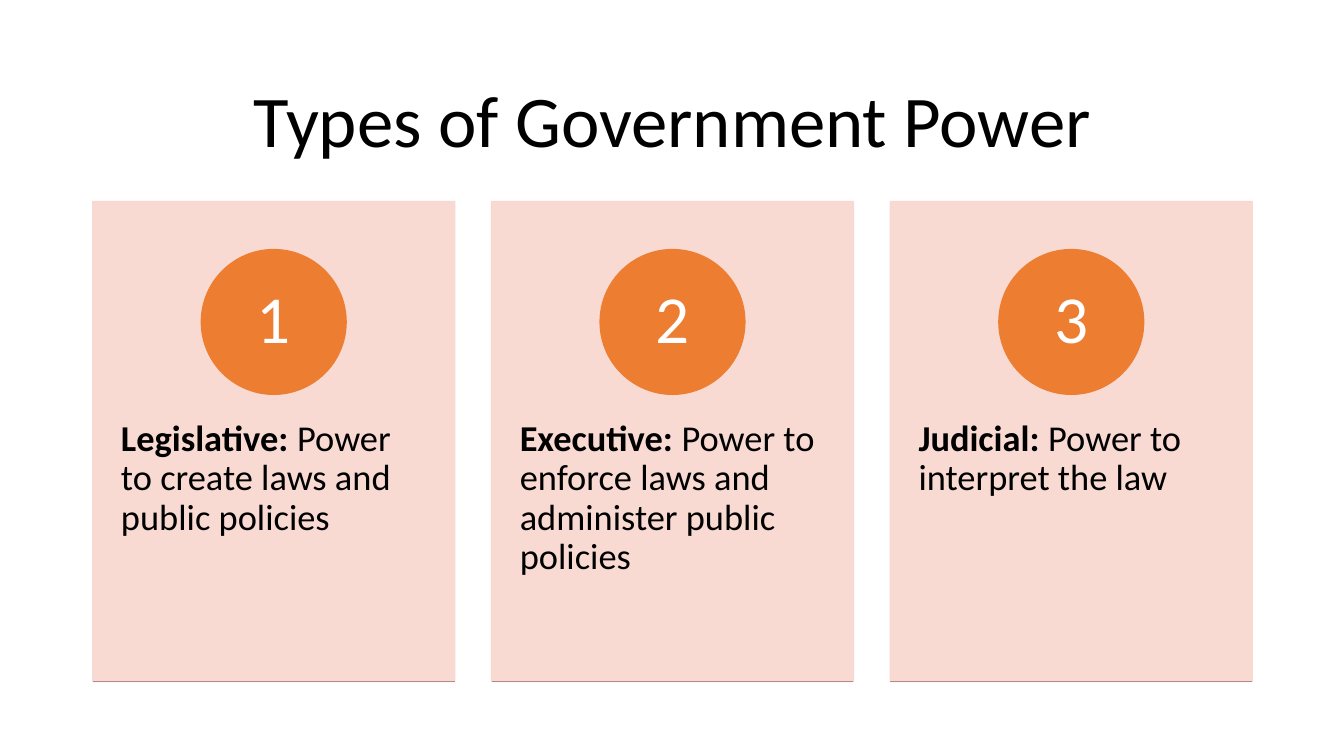
"""Build a slide with three numbered cards on the types of government power."""
from lxml import etree
from pptx import Presentation
from pptx.dml.color import RGBColor
from pptx.enum.shapes import MSO_CONNECTOR, MSO_SHAPE
from pptx.enum.text import MSO_ANCHOR, PP_ALIGN
from pptx.oxml.ns import qn
from pptx.util import Inches, Pt

TITLE = "Types of Government Power"
POWERS = [
    ("Legislative: ", "Power to create laws and public policies"),
    ("Executive: ", "Power to enforce laws and administer public policies"),
    ("Judicial: ", "Power to interpret the law"),
]

RECT, OVAL, STRAIGHT = MSO_SHAPE.RECTANGLE, MSO_SHAPE.OVAL, MSO_CONNECTOR.STRAIGHT
TOP, MIDDLE = MSO_ANCHOR.TOP, MSO_ANCHOR.MIDDLE
LEFT, CENTER = PP_ALIGN.LEFT, PP_ALIGN.CENTER

FONT = "Calibri"
BLACK, WHITE, PEACH, ORANGE, RULE = "000000", "FFFFFF", "F8D7CE", "ED7D31", "B58A8A"
CARD_OPACITY = 90

SLIDE_W, SLIDE_H = 13.33, 7.5
MARGIN = 0.92
CONTENT_W = 11.5
TITLE_TOP, TITLE_H = 0.61, 1.24
CARD_TOP, CARD_W, CARD_H = 2, 3.59, 4.76
PITCH = (CONTENT_W - CARD_W) / (len(POWERS) - 1)
BADGE = CARD_W * 0.4
BADGE_TOP = CARD_TOP + CARD_H * 0.1
BODY_TOP = CARD_TOP + CARD_H * 0.38
BODY_H = CARD_H * 0.6


def color(hex_code):
    return RGBColor.from_string(hex_code)


def add_filled(slide, preset, box, hex_code, opacity=100):
    shape = slide.shapes.add_shape(preset, *map(Inches, box))
    shape.shadow.inherit = False
    shape.fill.solid()
    shape.fill.fore_color.rgb = color(hex_code)
    shape.line.color.rgb = color(hex_code)
    shape.line.width = Pt(1)
    if opacity < 100:
        for tint in shape.element.spPr.iter(qn("a:srgbClr")):
            etree.SubElement(tint, qn("a:alpha"), val=str(opacity * 1000))
    return shape


def write(shape, runs, size, hex_code, align, anchor, insets):
    frame = shape.text_frame
    frame.word_wrap = True
    frame.vertical_anchor = anchor
    frame.margin_left = frame.margin_right = Inches(insets[0])
    frame.margin_top = frame.margin_bottom = Inches(insets[1])
    paragraph = frame.paragraphs[0]
    paragraph.alignment = align
    paragraph.line_spacing = 0.9
    for words, bold in runs:
        run = paragraph.add_run()
        run.text = words
        run.font.name = FONT
        run.font.size = Pt(size)
        run.font.bold = bold
        run.font.color.rgb = color(hex_code)


def add_rule(slide, left, top, width):
    rule = slide.shapes.add_connector(
        STRAIGHT, Inches(left), Inches(top), Inches(left + width), Inches(top))
    rule.line.color.rgb = color(RULE)
    rule.line.width = Pt(0.5)
    etree.SubElement(rule.element.spPr, qn("a:effectLst"))


def add_card(slide, number, label, meaning):
    left = MARGIN + (number - 1) * PITCH
    add_filled(slide, RECT, (left, CARD_TOP, CARD_W, CARD_H), PEACH, CARD_OPACITY)
    body = slide.shapes.add_textbox(*map(Inches, (left, BODY_TOP, CARD_W, BODY_H)))
    write(body, [(label, True), (meaning, False)], 26, BLACK, LEFT, TOP, (0.28, 0.36))
    badge_left = left + (CARD_W - BADGE) / 2
    badge = add_filled(slide, OVAL, (badge_left, BADGE_TOP, BADGE, BADGE), ORANGE)
    write(badge, [(str(number), False)], 48, WHITE, CENTER, MIDDLE, (0.11, 0.01))
    add_rule(slide, left, CARD_TOP + CARD_H, CARD_W)


def main():
    deck = Presentation()
    deck.slide_width, deck.slide_height = Inches(SLIDE_W), Inches(SLIDE_H)
    slide = deck.slides.add_slide(deck.slide_layouts[6])
    title = slide.shapes.add_textbox(
        *map(Inches, (MARGIN, TITLE_TOP, CONTENT_W, TITLE_H)))
    write(title, [(TITLE, False)], 52, BLACK, CENTER, MIDDLE, (0.1, 0.05))
    for number, (label, meaning) in enumerate(POWERS, 1):
        add_card(slide, number, label, meaning)
    deck.save("out.pptx")


if __name__ == "__main__":
    main()
